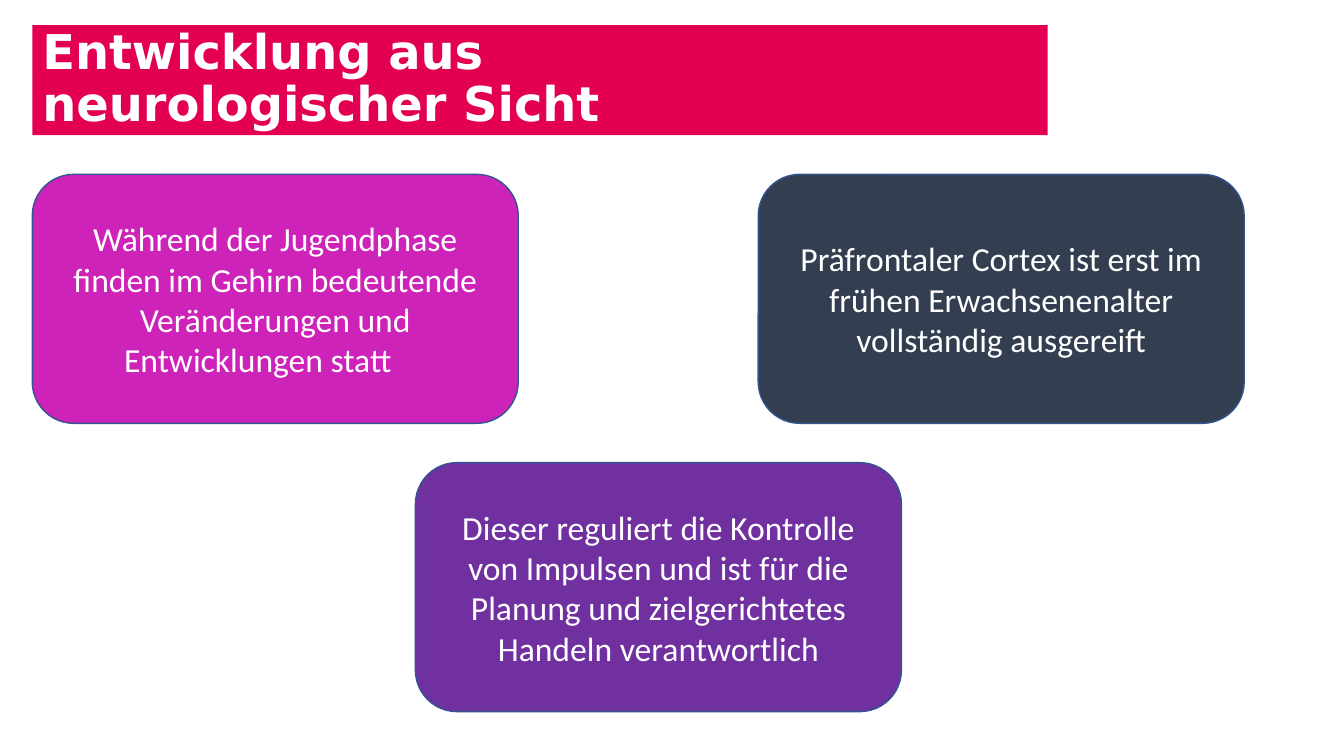
from pptx import Presentation
from pptx import util as u
from pptx.dml.color import RGBColor
from pptx.enum import shapes, text

COLORS = {
    "white": "FFFFFF",
    "title": "E30052",
    "outline": "325491",
    "violet": "7030A0",
    "magenta": "CD23B9",
    "slate": "333F50",
}
WIDTH, HEIGHT = 13.33, 7.5
MARGIN = 0.32
CARD_W, CARD_H = 4.82, 2.47
TOP_ROW = 1.73
BOTTOM_ROW = TOP_ROW + CARD_H + 0.39

CARDS = [
    (4.12, BOTTOM_ROW, "violet",
     "Dieser reguliert die Kontrolle von Impulsen und ist für die "
     "Planung und zielgerichtetes Handeln verantwortlich"),
    (MARGIN, TOP_ROW, "magenta",
     "Während der Jugendphase finden im Gehirn bedeutende "
     "Veränderungen und Entwicklungen statt\t"),
    (7.52, TOP_ROW, "slate",
     "Präfrontaler Cortex ist erst im frühen Erwachsenenalter "
     "vollständig ausgereift"),
]


def rgb(name):
    """Return the palette colour of the given name."""
    return RGBColor.from_string(COLORS[name])


def fill_shape(sp, name):
    """Give a shape a solid palette fill."""
    sp.fill.solid()
    sp.fill.fore_color.rgb = rgb(name)


def add_run(p, words, font, size, bold=False):
    """Append a white run to a paragraph."""
    r = p.add_run()
    r.text = words
    r.font.name, r.font.size, r.font.bold = font, u.Pt(size), bold
    r.font.color.rgb = rgb("white")


def place_title(s, box, lines):
    """Move the title placeholder into the box and write its lines."""
    sp = s.shapes.title
    sp.left, sp.top, sp.width, sp.height = map(u.Inches, box)
    fill_shape(sp, "title")
    tf = sp.text_frame
    tf.word_wrap = True
    tf.auto_size = text.MSO_AUTO_SIZE.NONE
    tf.vertical_anchor = text.MSO_ANCHOR.MIDDLE
    p = tf.paragraphs[0]
    p.alignment = text.PP_ALIGN.LEFT
    p.line_spacing = 0.9
    for i, line in enumerate(lines):
        if i:
            p.add_line_break()
        add_run(p, line, "DejaVu Sans", 34.2, True)


def add_card(s, box, color, words):
    """Draw a rounded card with centred text in the box."""
    sp = s.shapes.add_shape(shapes.MSO_SHAPE.ROUNDED_RECTANGLE, *map(u.Inches, box))
    sp.shadow.inherit = False
    fill_shape(sp, color)
    sp.line.color.rgb = rgb("outline")
    sp.line.width = u.Pt(1)
    tf = sp.text_frame
    tf.word_wrap = True
    tf.vertical_anchor = text.MSO_ANCHOR.MIDDLE
    p = tf.paragraphs[0]
    p.alignment = text.PP_ALIGN.CENTER
    add_run(p, words, "Calibri", 24)


def main():
    """Build and save the slide."""
    prs = Presentation()
    prs.slide_width, prs.slide_height = u.Inches(WIDTH), u.Inches(HEIGHT)
    s = prs.slides.add_slide(prs.slide_layouts[5])
    place_title(s, (MARGIN, 0.25, 10.07, 1.09),
                ["Entwicklung aus ", "neurologischer Sicht"])
    for left, top, color, words in CARDS:
        add_card(s, (left, top, CARD_W, CARD_H), color, words)
    prs.save("out.pptx")


if __name__ == "__main__":
    main()
